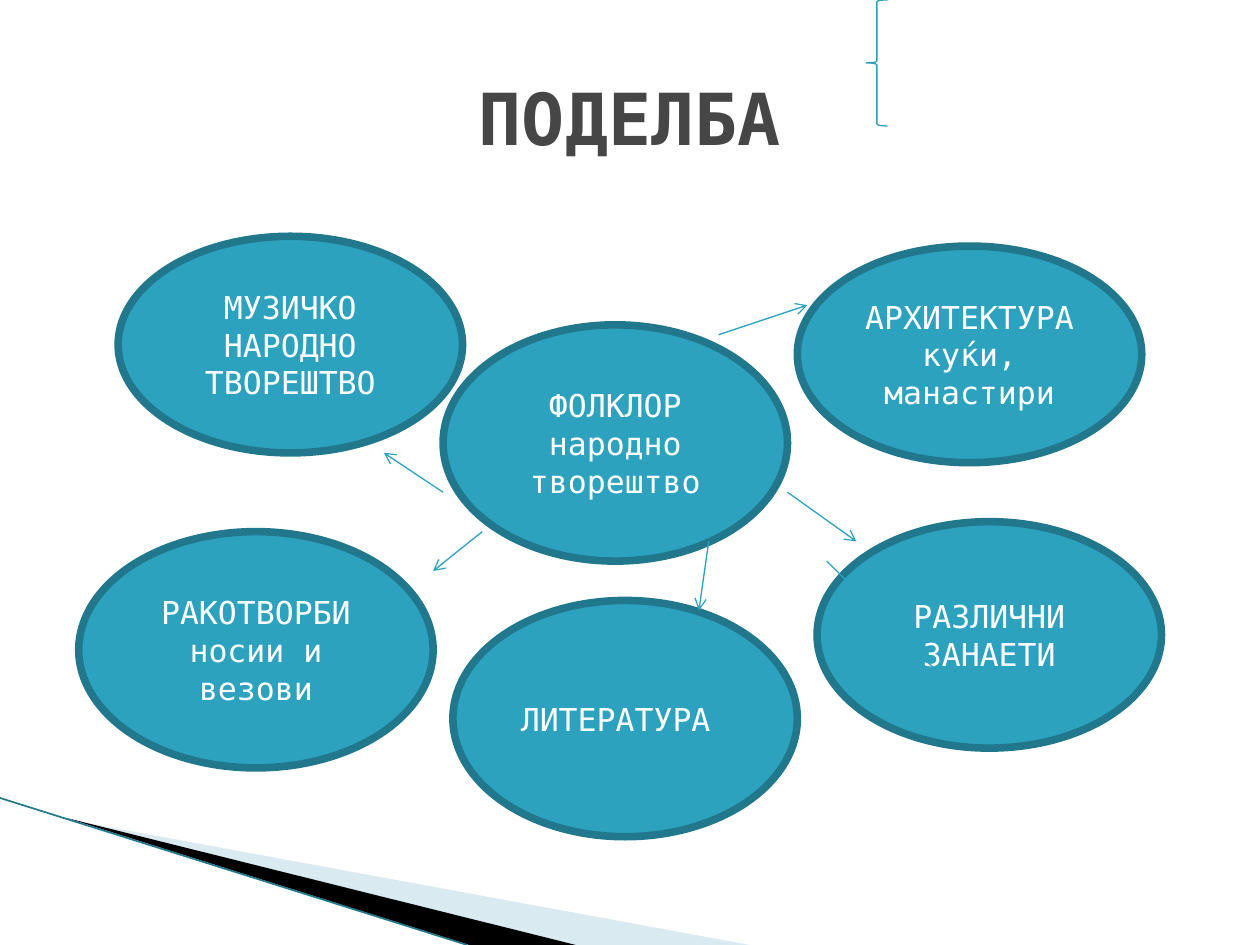
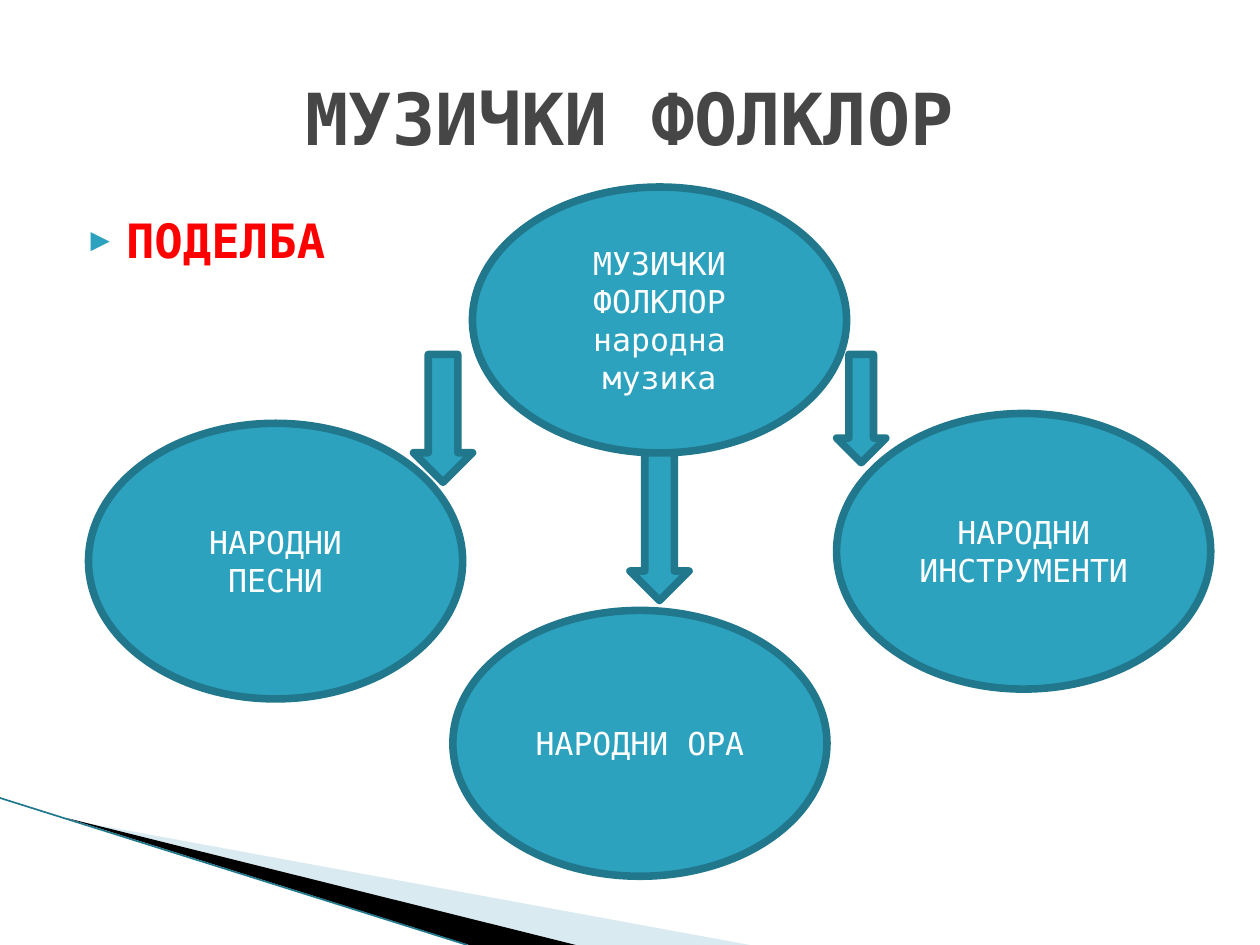
import pptx
import pptx.dml.color
import pptx.enum.shapes
import pptx.enum.text
import pptx.oxml.ns
import pptx.util
import lxml.etree

Pt = pptx.util.Pt
SHAPE = pptx.enum.shapes.MSO_SHAPE
STRAIGHT = pptx.enum.shapes.MSO_CONNECTOR.STRAIGHT
ALIGN = pptx.enum.text.PP_ALIGN
MIDDLE = pptx.enum.text.MSO_ANCHOR.MIDDLE
FONT = "DejaVu Sans Mono"
COLORS = {
    "teal": "2DA2BF",
    "outline": "21788D",
    "band": "A0CBDC",
    "black": "000000",
    "title": "464646",
    "white": "FFFFFF",
    "red": "FF0000",
}


def rgb(name):
    return pptx.dml.color.RGBColor.from_string(COLORS[name])


def add_xml(parent, tag, **attributes):
    child = lxml.etree.SubElement(parent, pptx.oxml.ns.qn(tag))
    for key, value in attributes.items():
        child.set(key, value)
    return child


def place(shape, left, top, width, height):
    shape.left, shape.top = Pt(left), Pt(top)
    shape.width, shape.height = Pt(width), Pt(height)


def style_text(paragraph, size, color, bold=False):
    for run in paragraph.runs:
        run.font.name = FONT
        run.font.size = Pt(size)
        run.font.bold = bold
        run.font.color.rgb = rgb(color)


def add_title(slide, text):
    title = slide.shapes.title
    place(title, 36, 21.6, 648, 90)
    title.text_frame.text = text
    title.text_frame.vertical_anchor = MIDDLE
    heading = title.text_frame.paragraphs[0]
    heading.alignment = ALIGN.CENTER
    style_text(heading, 41, "title", bold=True)


def add_bullet(slide, text):
    body = slide.placeholders[1]
    place(body, 36, 117, 648, 356)
    body.text_frame.text = text
    item = body.text_frame.paragraphs[0]
    properties = item._p.get_or_add_pPr()
    properties.set("marL", str(Pt(28.8)))
    properties.set("indent", str(Pt(-20.2)))
    bullet_color = add_xml(properties, "a:buClr")
    add_xml(bullet_color, "a:srgbClr", val=COLORS["teal"])
    add_xml(properties, "a:buSzPct", val="68000")
    add_xml(properties, "a:buFont", typeface=FONT)
    add_xml(properties, "a:buChar", char="▶")
    item.space_before = Pt(0)
    style_text(item, 27, "red", bold=True)


def add_band(slide, points, color, opacity=100):
    corners = [(Pt(x), Pt(y)) for x, y in points]
    builder = slide.shapes.build_freeform(*corners[0])
    builder.add_line_segments(corners[1:])
    band = builder.convert_to_shape()
    band.shadow.inherit = False
    band.fill.solid()
    band.fill.fore_color.rgb = rgb(color)
    band.line.fill.background()
    if opacity < 100:
        tint = band.element.spPr.find(".//" + pptx.oxml.ns.qn("a:srgbClr"))
        add_xml(tint, "a:alpha", val=str(opacity * 1000))


def add_line(slide, start, end, color, width, arrow=False):
    line = slide.shapes.add_connector(STRAIGHT, *map(Pt, start + end))
    line.line.color.rgb = rgb(color)
    line.line.width = Pt(width)
    if arrow:
        add_xml(line.line._get_or_add_ln(), "a:tailEnd", type="arrow")
    add_xml(line.element.spPr, "a:effectLst")


def add_corner(slide):
    add_band(slide, [(39.6, 468.5), (428.4, 540), (328.3, 540)], "band", 40)
    add_band(slide, [(38.2, 467.5), (329, 540), (268, 540)], "black")
    add_line(slide, (0, 456), (267, 540), "outline", 0.95)


def add_solid(slide, kind, left, top, width, height):
    solid = slide.shapes.add_shape(kind, *map(Pt, (left, top, width, height)))
    solid.shadow.inherit = False
    solid.fill.solid()
    solid.fill.fore_color.rgb = rgb("teal")
    solid.line.color.rgb = rgb("outline")
    solid.line.width = Pt(4.33)
    return solid


def add_topic(slide, text, left, top, width, height):
    topic = add_solid(slide, SHAPE.OVAL, left, top, width, height)
    frame = topic.text_frame
    frame.text = text
    frame.word_wrap = True
    frame.vertical_anchor = MIDDLE
    frame.paragraphs[0].alignment = ALIGN.CENTER
    style_text(frame.paragraphs[0], 18, "white")


def add_brace(slide, left, top, width, height):
    brace = slide.shapes.add_shape(SHAPE.LEFT_BRACE, *map(Pt, (left, top, width, height)))
    brace.shadow.inherit = False
    brace.fill.background()
    brace.line.color.rgb = rgb("teal")
    brace.line.width = Pt(0.75)


def start_slide(deck, layout, title):
    slide = deck.slides.add_slide(deck.slide_layouts[layout])
    add_corner(slide)
    add_title(slide, title)
    return slide


def build_division(deck):
    slide = start_slide(deck, 5, "ПОДЕЛБА")
    for topic in [
        ("ФОЛКЛОР народно творештво", 253.2, 185.6, 196.8, 135),
        ("ЛИТЕРАТУРА ", 258.8, 343.1, 196.8, 135),
        ("МУЗИЧКО НАРОДНО ТВОРЕШТВО", 67.5, 135, 196.8, 123.8),
        ("АРХИТЕКТУРА куќи, манастири", 455.6, 140.6, 196.8, 123.8),
        ("РАЗЛИЧНИ ЗАНАЕТИ", 466.9, 298.1, 196.8, 129.4),
        ("РАКОТВОРБИ носии и везови", 45, 303.8, 202.5, 135),
    ]:
        add_topic(slide, *topic)
    for start, end in [
        ((253.2, 281.3), (219.4, 258.8)),
        ((275.6, 303.8), (247.5, 326.3)),
        ((472.5, 320.6), (544.5, 392.6)),
        ((450, 281.3), (489.4, 309.4)),
        ((410.6, 191.3), (461.3, 174.4)),
        ((405, 309.4), (399.4, 348.8)),
    ]:
        add_line(slide, start, end, "teal", 0.75, arrow=True)
    add_brace(slide, 495, 0, 12.2, 72)


def build_music(deck):
    slide = start_slide(deck, 1, "МУЗИЧКИ ФОЛКЛОР")
    add_bullet(slide, "ПОДЕЛБА")
    for topic in [
        ("МУЗИЧКИ ФОЛКЛОР народна музика", 270, 106.9, 213.8, 151.9),
        ("НАРОДНИ ИНСТРУМЕНТИ", 478.1, 236.3, 213.8, 157.5),
        ("НАРОДНИ ОРА", 258.8, 348.8, 213.8, 151.9),
        ("НАРОДНИ ПЕСНИ", 50.6, 241.9, 213.8, 157.5),
    ]:
        add_topic(slide, *topic)
    for arrow in [
        (360, 258.8, 33.8, 84.4),
        (236.3, 202.5, 33.8, 73.1),
        (478.1, 202.5, 28.1, 61.9),
    ]:
        add_solid(slide, SHAPE.DOWN_ARROW, *arrow)


def main():
    deck = pptx.Presentation()
    deck.slide_width, deck.slide_height = Pt(720), Pt(540)
    build_division(deck)
    build_music(deck)
    deck.save("out.pptx")


if __name__ == "__main__":
    main()
